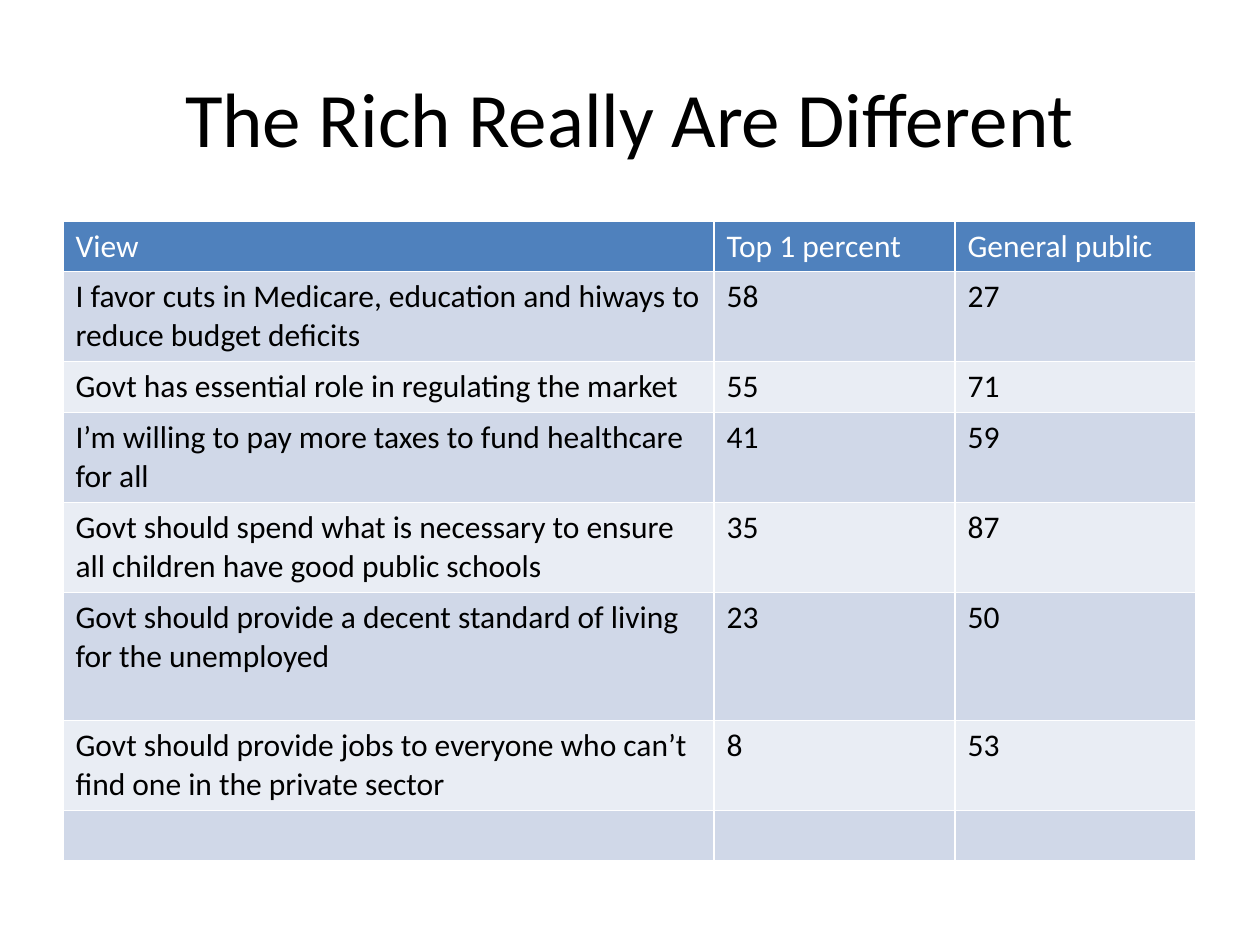
from lxml.etree import SubElement as Sub
from pptx import Presentation
from pptx.dml.color import RGBColor as Rgb
from pptx.enum.text import MSO_ANCHOR as Anchor, PP_ALIGN as Align
from pptx.oxml.ns import qn
from pptx.util import Pt

PX = 914400 // 126
FONT = "Calibri"
WHITE, BLACK, BLUE = "FFFFFF", "000000", "4F81BD"
BANDS = ("D0D8E8", "E9EDF4")

COLS = (651, 241, 241)
ROWS = [
    (50, "View", "Top 1 percent", "General public"),
    (90, "I favor cuts in Medicare, education and hiways to reduce budget deficits",
     "58", "27"),
    (51, "Govt has essential role in regulating the market", "55", "71"),
    (90, "I’m willing to pay more taxes to fund healthcare for all", "41", "59"),
    (90, "Govt should spend what is necessary to ensure all children have good "
     "public schools", "35", "87"),
    (128, "Govt should provide a decent standard of living for the unemployed",
     "23", "50"),
    (90, "Govt should provide jobs to everyone who can’t find one in the private "
     "sector", "8", "53"),
    (50, "", "", ""),
]


def px(*sizes):
    return [size * PX for size in sizes]


def color(code):
    return Rgb.from_string(code)


def style(para, size, code):
    font = para.font
    font.name, font.size, font.bold = FONT, Pt(size), False
    font.color.rgb = color(code)


def add_title(slide, text, box):
    frame = slide.shapes.add_textbox(*px(*box)).text_frame
    frame.word_wrap = True
    frame.vertical_anchor = Anchor.MIDDLE
    para = frame.paragraphs[0]
    para.text, para.alignment = text, Align.CENTER
    style(para, 44, BLACK)


def add_edges(cell, code):
    # Borders come before the fill in the cell properties
    props = cell._tc.get_or_add_tcPr()
    for side in "LRTB":
        line = Sub(props, qn(f"a:ln{side}"), w=str(Pt(1)))
        fill = Sub(line, qn("a:solidFill"))
        Sub(fill, qn("a:srgbClr"), val=code)


def fill_cell(cell, text, ink, back):
    add_edges(cell, WHITE)
    cell.fill.solid()
    cell.fill.fore_color.rgb = color(back)
    cell.text = text
    style(cell.text_frame.paragraphs[0], 18, ink)


def add_grid(slide, left, top):
    width, height = sum(COLS), sum(row[0] for row in ROWS)
    grid = slide.shapes.add_table(
        len(ROWS), len(COLS), *px(left, top, width, height)).table
    for col, size in zip(grid.columns, COLS):
        col.width = size * PX
    for i, (size, *texts) in enumerate(ROWS):
        grid.rows[i].height = size * PX
        ink, back = (BLACK, BANDS[(i - 1) % 2]) if i else (WHITE, BLUE)
        for j, text in enumerate(texts):
            fill_cell(grid.cell(i, j), text, ink, back)


def main():
    deck = Presentation()
    deck.slide_width, deck.slide_height = px(1260, 945)
    slide = deck.slides.add_slide(deck.slide_layouts[6])
    # Heading
    add_title(slide, "The Rich Really Are Different", (63, 38, 1134, 157))
    # Survey table
    add_grid(slide, 63, 221)
    deck.save("out.pptx")


if __name__ == "__main__":
    main()
